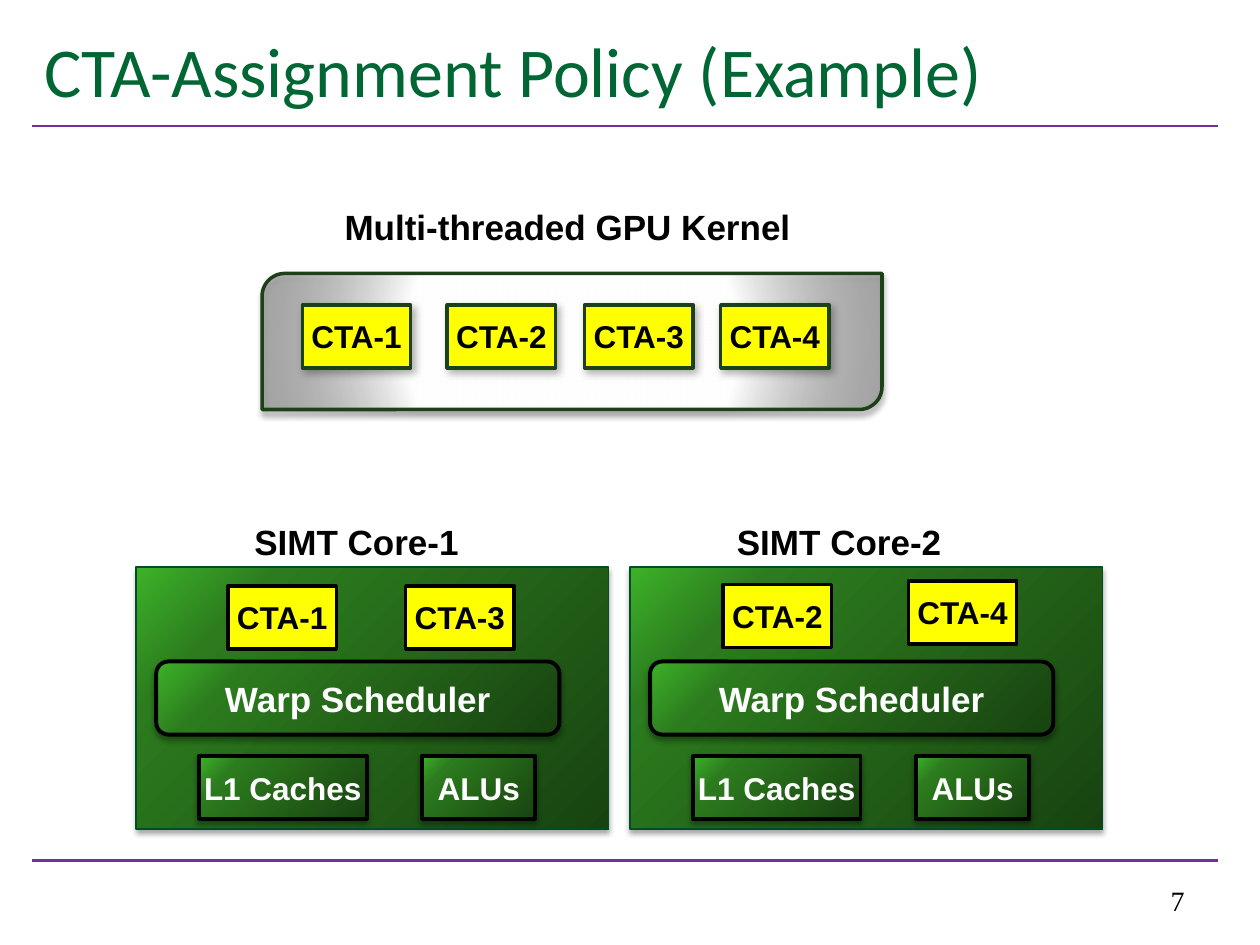
"""Build the slide that shows how CTAs are assigned to SIMT cores."""
from dataclasses import dataclass

import lxml.etree
import pptx
import pptx.dml.color
import pptx.enum.shapes
import pptx.enum.text
import pptx.oxml
import pptx.oxml.ns
import pptx.util

Inches = pptx.util.Inches
Pt = pptx.util.Pt
RGBColor = pptx.dml.color.RGBColor
Shape = pptx.enum.shapes.MSO_SHAPE
Align = pptx.enum.text.PP_ALIGN
Anchor = pptx.enum.text.MSO_ANCHOR
qn = pptx.oxml.ns.qn

BLACK = RGBColor(0x00, 0x00, 0x00)
WHITE = RGBColor(0xFF, 0xFF, 0xFF)
GRAY = RGBColor(0x80, 0x80, 0x80)
PURPLE = RGBColor(0x70, 0x30, 0xA0)
TITLE_GREEN = RGBColor(0x00, 0x66, 0x33)
EDGE_GREEN = RGBColor(0x00, 0x4D, 0x26)
DARK_GREEN = RGBColor(0x1E, 0x40, 0x18)
YELLOW = RGBColor(0xFF, 0xFF, 0x00)


@dataclass(frozen=True)
class Gradient:
    """Radial gradient with (position, colour, opacity) stops and its focus rectangle."""
    stops: tuple
    focus: tuple


@dataclass(frozen=True)
class Shadow:
    """Outer shadow: opacity in percent, blur and distance in points, angle in degrees."""
    opacity: int
    blur: float
    distance: float
    angle: int


@dataclass(frozen=True)
class Style:
    """Look of a box."""
    fill: RGBColor | Gradient
    line: RGBColor
    line_width: float
    shadow: Shadow | None = None
    color: RGBColor = BLACK


@dataclass(frozen=True)
class Block:
    """A box with its place in inches and its label."""
    left: float
    top: float
    width: float
    height: float
    style: Style
    text: str = ""
    size: int = 18
    kind: Shape = Shape.RECTANGLE


@dataclass(frozen=True)
class Core:
    """A SIMT core and the CTAs placed on it, as (text, left, top)."""
    name: str
    left: float
    label_left: float
    ctas: tuple


GREEN_FADE = Gradient(
    ((0, RGBColor(0x18, 0x43, 0x10), 100), (80, RGBColor(0x2C, 0x7B, 0x1E), 100),
     (100, RGBColor(0x3D, 0xB2, 0x28), 100)), (100, 100, 0, 0))
GRAY_FADE = Gradient(((0, WHITE, 100), (52, WHITE, 100), (100, GRAY, 56)), (50, 50, 50, 50))
CORE_SHADOW = Shadow(35, 3.1, 1.8, 90)
CORE_STYLE = Style(GREEN_FADE, EDGE_GREEN, 0.75, CORE_SHADOW)
UNIT_STYLE = Style(GREEN_FADE, BLACK, 2.25, CORE_SHADOW, WHITE)
KERNEL_STYLE = Style(GRAY_FADE, DARK_GREEN, 2, Shadow(32, 3.5, 2.2, 90))
WAITING_CTA = Style(YELLOW, DARK_GREEN, 2, Shadow(30, 4.5, 2.6, 53))
ASSIGNED_CTA = Style(YELLOW, BLACK, 2)

KERNEL_CTAS = (("CTA-1", 2.4), ("CTA-2", 3.55), ("CTA-3", 4.64), ("CTA-4", 5.72))
CORES = (
    Core("SIMT Core-1", 1.08, 1.92, (("CTA-1", 1.81, 4.65), ("CTA-3", 3.22, 4.65))),
    Core("SIMT Core-2", 5, 5.75, (("CTA-2", 5.74, 4.64), ("CTA-4", 7.21, 4.61))),
)


def add_color(parent, color: RGBColor, opacity: int) -> None:
    """Append a colour with its opacity."""
    element = lxml.etree.SubElement(parent, qn("a:srgbClr"), val=str(color))
    if opacity < 100:
        lxml.etree.SubElement(element, qn("a:alpha"), val=str(opacity * 1000))


def apply_gradient(shape, gradient: Gradient) -> None:
    """Give the shape a radial gradient fill."""
    shape.fill.background()
    properties = shape.element.spPr
    fill = properties.makeelement(qn("a:gradFill"), {"rotWithShape": "1"})
    stops = lxml.etree.SubElement(fill, qn("a:gsLst"))
    for position, color, opacity in gradient.stops:
        stop = lxml.etree.SubElement(stops, qn("a:gs"), pos=str(position * 1000))
        add_color(stop, color, opacity)
    circle = lxml.etree.SubElement(fill, qn("a:path"), {"path": "circle"})
    sides = {side: str(value * 1000) for side, value in zip("ltrb", gradient.focus)}
    lxml.etree.SubElement(circle, qn("a:fillToRect"), sides)
    properties.replace(properties.find(qn("a:noFill")), fill)


def apply_shadow(shape, shadow: Shadow) -> None:
    """Give the shape an outer shadow."""
    effects = shape.element.spPr.find(qn("a:effectLst"))
    outer = lxml.etree.SubElement(
        effects, qn("a:outerShdw"), blurRad=str(int(Pt(shadow.blur))),
        dist=str(int(Pt(shadow.distance))), dir=str(shadow.angle * 60000),
        algn="ctr", rotWithShape="0")
    add_color(outer, BLACK, shadow.opacity)


def write(frame, text: str, size: int, color: RGBColor, align: Align,
          font: str = "Arial", bold: bool = True) -> None:
    """Write one formatted paragraph."""
    frame.word_wrap = True
    para = frame.paragraphs[0]
    para.text = text
    para.alignment = align
    para.font.name = font
    para.font.size = Pt(size)
    para.font.bold = bold
    para.font.color.rgb = color


def add_block(slide, block: Block) -> None:
    """Draw a box with its label."""
    shape = slide.shapes.add_shape(block.kind, Inches(block.left), Inches(block.top),
                                   Inches(block.width), Inches(block.height))
    style = block.style
    shape.shadow.inherit = False
    if isinstance(style.fill, Gradient):
        apply_gradient(shape, style.fill)
    else:
        shape.fill.solid()
        shape.fill.fore_color.rgb = style.fill
    shape.line.color.rgb = style.line
    shape.line.width = Pt(style.line_width)
    if style.shadow:
        apply_shadow(shape, style.shadow)
    if block.text:
        frame = shape.text_frame
        frame.margin_left = frame.margin_right = 0
        frame.vertical_anchor = Anchor.MIDDLE
        write(frame, block.text, block.size, style.color, Align.CENTER)


def add_label(slide, text: str, left: float, top: float, width: float, align: Align) -> None:
    """Add a bold heading above a box."""
    box = slide.shapes.add_textbox(Inches(left), Inches(top), Inches(width), Inches(0.44))
    write(box.text_frame, text, 20, BLACK, align)


def add_rule(slide, top: float) -> None:
    """Draw a horizontal rule across the slide."""
    rule = slide.shapes.add_connector(pptx.enum.shapes.MSO_CONNECTOR.STRAIGHT,
                                      Inches(0.25), Inches(top), Inches(9.67), Inches(top))
    rule.line.color.rgb = PURPLE
    rule.line.width = Pt(1.5)
    lxml.etree.SubElement(rule.element.spPr, qn("a:effectLst"))


def add_core(slide, core: Core) -> None:
    """Draw a core with its units, heading and CTAs."""
    left = core.left
    add_block(slide, Block(left, 4.5, 3.75, 2.08, CORE_STYLE))
    add_block(slide, Block(left + 0.16, 5.25, 3.2, 0.58, UNIT_STYLE, "Warp Scheduler", 20,
                           Shape.ROUNDED_RECTANGLE))
    add_block(slide, Block(left + 2.27, 6, 0.9, 0.5, UNIT_STYLE, "ALUs"))
    add_block(slide, Block(left + 0.5, 6, 1.33, 0.5, UNIT_STYLE, "L1 Caches"))
    add_label(slide, core.name, core.label_left, 4.08, 2.83, Align.LEFT)
    for text, cta_left, cta_top in core.ctas:
        add_block(slide, Block(cta_left, cta_top, 0.86, 0.5, ASSIGNED_CTA, text))


def main() -> None:
    """Build and save the deck."""
    deck = pptx.Presentation()
    deck.slide_width, deck.slide_height = Inches(10), Inches(7.5)
    page = deck.slides.add_slide(deck.slide_layouts[5])
    for top in (6.83, 1):
        add_rule(page, top)
    title = page.shapes.title
    title.left, title.top = Inches(0.25), Inches(0.17)
    title.width, title.height = Inches(9.42), Inches(0.83)
    title.text_frame.vertical_anchor = Anchor.TOP
    write(title.text_frame, "CTA-Assignment Policy (Example)", 40, TITLE_GREEN,
          Align.LEFT, "Calibri", False)
    number = page.shapes.add_textbox(Inches(7.17), Inches(6.83), Inches(2.33), Inches(0.5))
    number.text_frame.vertical_anchor = Anchor.BOTTOM
    write(number.text_frame, "7", 16, BLACK, Align.RIGHT, "Times New Roman", False)
    add_block(page, Block(2.08, 2.17, 4.92, 1.08, KERNEL_STYLE,
                          kind=Shape.ROUND_2_DIAG_RECTANGLE))
    add_label(page, "Multi-threaded GPU Kernel", 2.17, 1.58, 4.67, Align.CENTER)
    for text, left in KERNEL_CTAS:
        add_block(page, Block(left, 2.42, 0.86, 0.5, WAITING_CTA, text))
    for core in CORES:
        add_core(page, core)
    deck.save("out.pptx")


if __name__ == "__main__":
    main()
